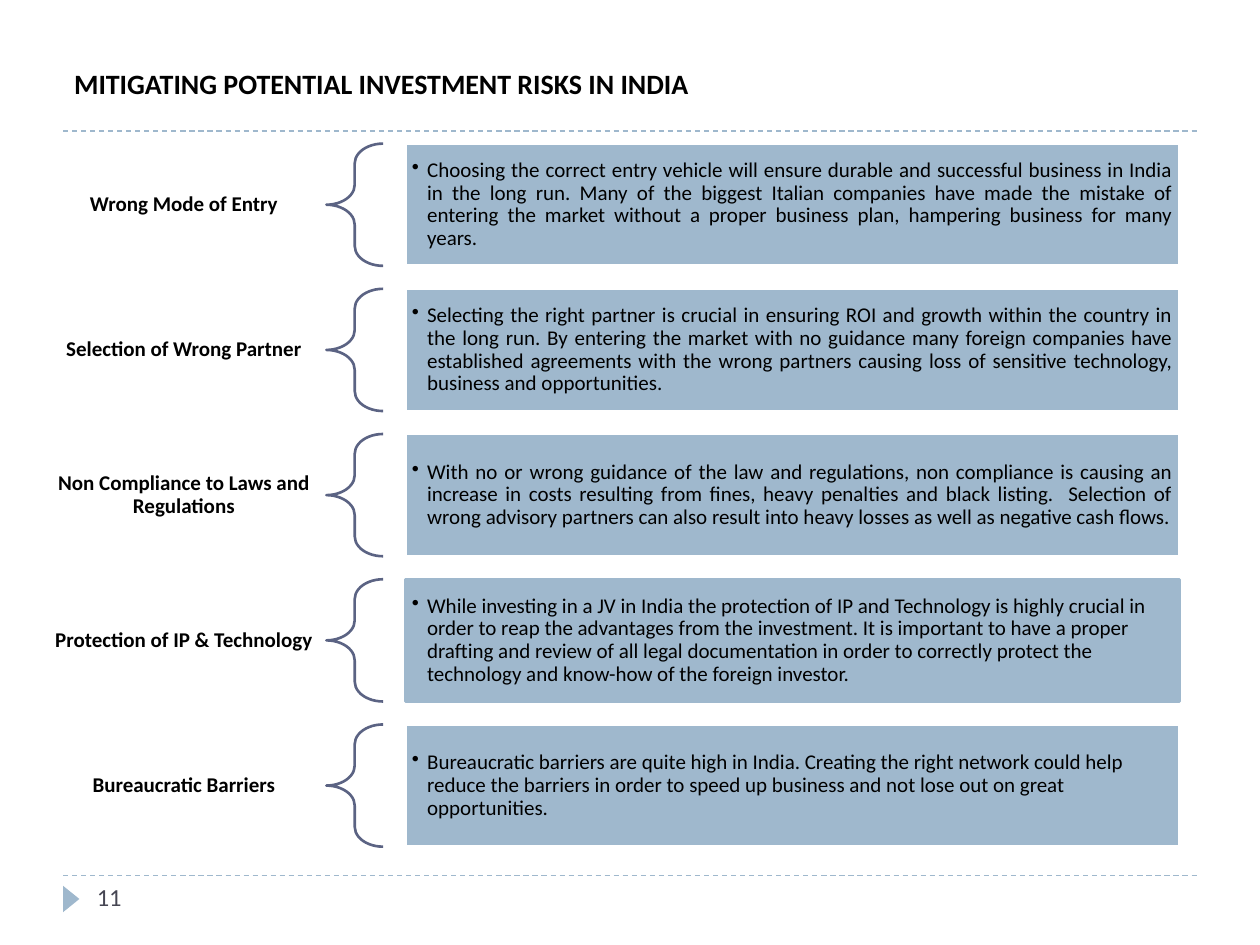
from dataclasses import dataclass

from lxml import etree
from pptx import Presentation
from pptx.dml.color import RGBColor
from pptx.enum.dml import MSO_LINE
from pptx.enum.shapes import MSO_CONNECTOR, MSO_SHAPE
from pptx.enum.text import MSO_ANCHOR, PP_ALIGN
from pptx.oxml.ns import qn
from pptx.util import Inches, Pt


@dataclass(frozen=True)
class Theme:
    font: str = "Calibri"
    text: RGBColor = RGBColor(0x00, 0x00, 0x00)
    number: RGBColor = RGBColor(0x46, 0x46, 0x53)
    accent: RGBColor = RGBColor(0x9F, 0xB8, 0xCD)
    brace: RGBColor = RGBColor(0x5B, 0x63, 0x83)
    white: RGBColor = RGBColor(0xFF, 0xFF, 0xFF)
    title_size: int = 16
    number_size: int = 14
    body_size: int = 12
    outline: float = 1.5
    rule: float = 0.75


THEME = Theme()
JUSTIFY, LEFT = PP_ALIGN.JUSTIFY, PP_ALIGN.LEFT

# label, advice, advice alignment, panel outline
RISKS = [
    ("Wrong Mode of Entry",
     "Choosing the correct entry vehicle will ensure durable and successful business in India "
     "in the long run. Many of the biggest Italian companies have made the mistake of entering "
     "the market without a proper business plan, hampering business for many years.",
     JUSTIFY, THEME.white),
    ("Selection of Wrong Partner",
     "Selecting the right partner is crucial in ensuring ROI and growth within the country in "
     "the long run. By entering the market with no guidance many foreign companies have "
     "established agreements with the wrong partners causing loss of sensitive technology, "
     "business and opportunities.",
     JUSTIFY, THEME.white),
    ("Non Compliance to Laws and Regulations",
     "With no or wrong guidance of the law and regulations, non compliance is causing an "
     "increase in costs resulting from fines, heavy penalties and black listing.  Selection of "
     "wrong advisory partners can also result into heavy losses as well as negative cash flows.",
     JUSTIFY, THEME.white),
    ("Protection of IP & Technology",
     "While investing in a JV in India the protection of IP and Technology is highly crucial in "
     "order to reap the advantages from the investment. It is important to have a proper "
     "drafting and review of all legal documentation in order to correctly protect the "
     "technology and know-how of the foreign investor.",
     LEFT, THEME.accent),
    ("Bureaucratic Barriers",
     "Bureaucratic barriers are quite high in India. Creating the right network could help "
     "reduce the barriers in order to speed up business and not lose out on great "
     "opportunities.",
     LEFT, THEME.white),
]


def add_text(shape, text, size, color=THEME.text, bold=False, align=LEFT,
             anchor=MSO_ANCHOR.MIDDLE, insets=(0.1, 0.05), spacing=None):
    """Fill the shape's first paragraph with one run and return the paragraph."""
    frame = shape.text_frame
    frame.word_wrap = True
    frame.vertical_anchor = anchor
    frame.margin_left = frame.margin_right = Inches(insets[0])
    frame.margin_top = frame.margin_bottom = Inches(insets[1])
    para = frame.paragraphs[0]
    para.alignment = align
    if spacing:
        para.line_spacing = spacing
    span = para.add_run()
    span.text = text
    span.font.name = THEME.font
    span.font.size = Pt(size)
    span.font.bold = bold
    span.font.color.rgb = color
    return para


def add_bullet(para, indent):
    props = para._p.get_or_add_pPr()
    props.set("marL", str(Inches(indent)))
    props.set("indent", str(-Inches(indent)))
    etree.SubElement(props, qn("a:buChar")).set("char", "•")


def add_rule(page, left, top, width):
    line = page.shapes.add_connector(MSO_CONNECTOR.STRAIGHT, Inches(left), Inches(top),
                                     Inches(left + width), Inches(top))
    line.line.color.rgb = THEME.accent
    line.line.width = Pt(THEME.rule)
    line.line.dash_style = MSO_LINE.DASH
    etree.SubElement(line._element.spPr, qn("a:effectLst"))


def add_header(page, left, top, width, height):
    box = page.shapes.add_textbox(Inches(left), Inches(top), Inches(width), Inches(height))
    add_text(box, "MITIGATING POTENTIAL INVESTMENT RISKS IN INDIA", THEME.title_size,
             bold=True, spacing=Pt(24))
    add_rule(page, 0.5, 1.04, 9)


def add_footer(page, left, top, width, height):
    add_rule(page, left, top, 9)
    marker = page.shapes.add_shape(MSO_SHAPE.ISOSCELES_TRIANGLE, Inches(left - 0.04),
                                   Inches(top + 0.12), Inches(0.21), Inches(0.13))
    marker.rotation = 90
    marker.shadow.inherit = False
    marker.fill.solid()
    marker.fill.fore_color.rgb = THEME.accent
    marker.line.fill.background()
    box = page.shapes.add_textbox(Inches(left + 0.17), Inches(top), Inches(width),
                                  Inches(height))
    add_text(box, "11", THEME.number_size, THEME.number, anchor=MSO_ANCHOR.TOP)


def add_risk(page, left, top, height, label, advice, align, outline):
    """Place a label, a brace and an advice panel side by side."""
    y, tall = Inches(top), Inches(height)
    name = page.shapes.add_textbox(Inches(left), y, Inches(2.26), tall)
    add_text(name, label, THEME.body_size, bold=True, align=PP_ALIGN.CENTER,
             insets=(0.09, 0.03), spacing=0.9)

    brace = page.shapes.add_shape(MSO_SHAPE.LEFT_BRACE, Inches(left + 2.26), y,
                                  Inches(0.45), tall)
    brace.adjustments[0] = 0.35
    brace.fill.background()

    panel = page.shapes.add_shape(MSO_SHAPE.RECTANGLE, Inches(left + 2.89), y,
                                  Inches(6.14), tall)
    panel.fill.solid()
    panel.fill.fore_color.rgb = THEME.accent
    para = add_text(panel, advice, THEME.body_size, align=align, insets=(0.05, 0.05),
                    spacing=0.9)
    add_bullet(para, 0.12)

    for shape, color in ((brace, THEME.brace), (panel, outline)):
        shape.shadow.inherit = False
        shape.line.color.rgb = color
        shape.line.width = Pt(THEME.outline)


def add_risk_list(page, left, top, height, row_height):
    pitch = (height - row_height) / (len(RISKS) - 1)
    for row, risk in enumerate(RISKS):
        add_risk(page, left, top + row * pitch, row_height, *risk)


def main():
    deck = Presentation()
    deck.slide_width, deck.slide_height = Inches(10), Inches(7.5)
    page = deck.slides.add_slide(deck.slide_layouts[6])
    add_footer(page, 0.5, 6.95, 2.17, 0.4)
    add_header(page, 0.49, 0.09, 8.77, 1.08)
    add_risk_list(page, 0.33, 1.14, 5.58, 0.97)
    deck.save("out.pptx")


if __name__ == "__main__":
    main()
